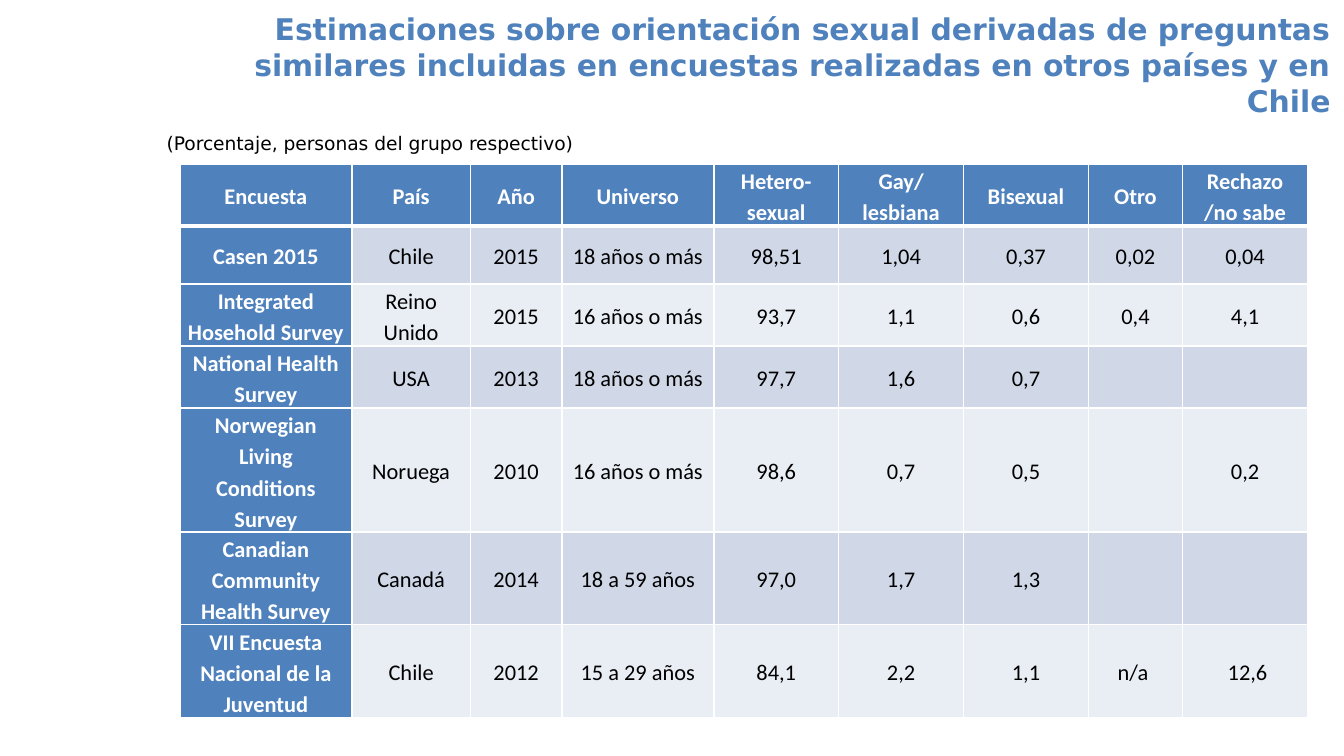
from dataclasses import dataclass

from lxml.etree import SubElement
from pptx import Presentation
from pptx.dml.color import RGBColor
from pptx.enum.text import MSO_ANCHOR, MSO_AUTO_SIZE, PP_ALIGN
from pptx.oxml.ns import qn
from pptx.util import Cm, Pt


@dataclass(frozen=True)
class Theme:
    accent: str = "4F81BD"
    bands: tuple = ("D0D8E8", "E9EDF4")
    ink: str = "000000"
    white: str = "FFFFFF"
    heading_font: str = "DejaVu Sans"
    table_font: str = "Calibri"
    title_size: int = 16
    subtitle_size: int = 10
    table_size: int = 12
    rule: int = 1
    header_rule: int = 3


THEME = Theme()

COLUMN_WIDTHS = (3.25, 2.24, 1.73, 2.87, 2.36, 2.36, 2.36, 1.78, 2.36)
ROW_HEIGHTS = (1.14, 1.1, 1.17, 1.17, 1.75, 1.75, 1.75)
SURVEYS = (
    ("Encuesta", "País", "Año", "Universo", "Hetero-sexual",
     "Gay/ lesbiana", "Bisexual", "Otro", "Rechazo /no sabe"),
    ("Casen 2015", "Chile", "2015", "18 años o más",
     "98,51", "1,04", "0,37", "0,02", "0,04"),
    ("Integrated Hosehold Survey", "Reino Unido", "2015", "16 años o más",
     "93,7", "1,1", "0,6", "0,4", "4,1"),
    ("National Health Survey", "USA", "2013", "18 años o más",
     "97,7", "1,6", "0,7", "", ""),
    ("Norwegian Living Conditions Survey", "Noruega", "2010", "16 años o más",
     "98,6", "0,7", "0,5", "", "0,2"),
    ("Canadian Community Health Survey", "Canadá", "2014", "18 a 59 años",
     "97,0", "1,7", "1,3", "", ""),
    ("VII Encuesta Nacional de la Juventud", "Chile", "2012", "15 a 29 años",
     "84,1", "2,2", "1,1", "n/a ", " 12,6"),
)


def write(frame, text, font_name, size, color, bold=False, align=PP_ALIGN.LEFT):
    frame.text = text
    paragraph = frame.paragraphs[0]
    paragraph.alignment = align
    for run in paragraph.runs:
        run.font.name = font_name
        run.font.size = Pt(size)
        run.font.bold = bold
        run.font.color.rgb = RGBColor.from_string(color)
    return paragraph


def add_title(slide, text):
    title = slide.shapes.title
    title.left, title.top = Cm(2.8), Cm(0.41)
    title.width, title.height = Cm(22.6), Cm(1.63)
    frame = title.text_frame
    frame.auto_size = MSO_AUTO_SIZE.NONE
    frame.vertical_anchor = MSO_ANCHOR.MIDDLE
    write(frame, text, THEME.heading_font, THEME.title_size, THEME.accent,
          bold=True, align=PP_ALIGN.RIGHT)


def add_subtitle(slide, text):
    subtitle = slide.shapes.add_textbox(Cm(2.9), Cm(2.36), Cm(8.4), Cm(0.69))
    frame = subtitle.text_frame
    frame.word_wrap = False
    frame.auto_size = MSO_AUTO_SIZE.SHAPE_TO_FIT_TEXT
    write(frame, text, THEME.heading_font, THEME.subtitle_size, THEME.ink)


def add_borders(cell, top, bottom):
    properties = cell._tc.get_or_add_tcPr()
    widths = {"a:lnL": THEME.rule, "a:lnR": THEME.rule,
              "a:lnT": top, "a:lnB": bottom}
    for side, width in widths.items():
        line = SubElement(properties, qn(side), w=str(Pt(width)))
        fill = SubElement(line, qn("a:solidFill"))
        SubElement(fill, qn("a:srgbClr"), val=THEME.white)


def format_cell(cell, text, row, column):
    is_heading = row == 0 or column == 0
    add_borders(cell,
                top=THEME.header_rule if row == 1 else THEME.rule,
                bottom=THEME.header_rule if row == 0 else THEME.rule)
    cell.fill.solid()
    fill = THEME.accent if is_heading else THEME.bands[(row - 1) % 2]
    cell.fill.fore_color.rgb = RGBColor.from_string(fill)
    cell.margin_left = cell.margin_right = Cm(0.13)
    cell.margin_top = cell.margin_bottom = 0
    cell.vertical_anchor = MSO_ANCHOR.MIDDLE
    paragraph = write(cell.text_frame, text, THEME.table_font, THEME.table_size,
                      THEME.white if is_heading else THEME.ink,
                      bold=is_heading, align=PP_ALIGN.CENTER)
    paragraph.line_spacing = 1.15


def add_survey_table(slide):
    table = slide.shapes.add_table(
        len(SURVEYS), len(COLUMN_WIDTHS), Cm(3.4), Cm(3.1),
        Cm(sum(COLUMN_WIDTHS)), Cm(sum(ROW_HEIGHTS))).table
    for column, width in zip(table.columns, COLUMN_WIDTHS):
        column.width = Cm(width)
    for row, height in zip(table.rows, ROW_HEIGHTS):
        row.height = Cm(height)
    for row, survey in enumerate(SURVEYS):
        for column, text in enumerate(survey):
            format_cell(table.cell(row, column), text, row, column)


def main():
    presentation = Presentation()
    presentation.slide_width, presentation.slide_height = Cm(25.4), Cm(14.28)
    slide = presentation.slides.add_slide(presentation.slide_layouts[5])
    add_title(slide, "Estimaciones sobre orientación sexual derivadas de preguntas "
                     "similares incluidas en encuestas realizadas en otros países "
                     "y en Chile")
    add_subtitle(slide, "(Porcentaje, personas del grupo respectivo)")
    add_survey_table(slide)
    presentation.save("out.pptx")


if __name__ == "__main__":
    main()
